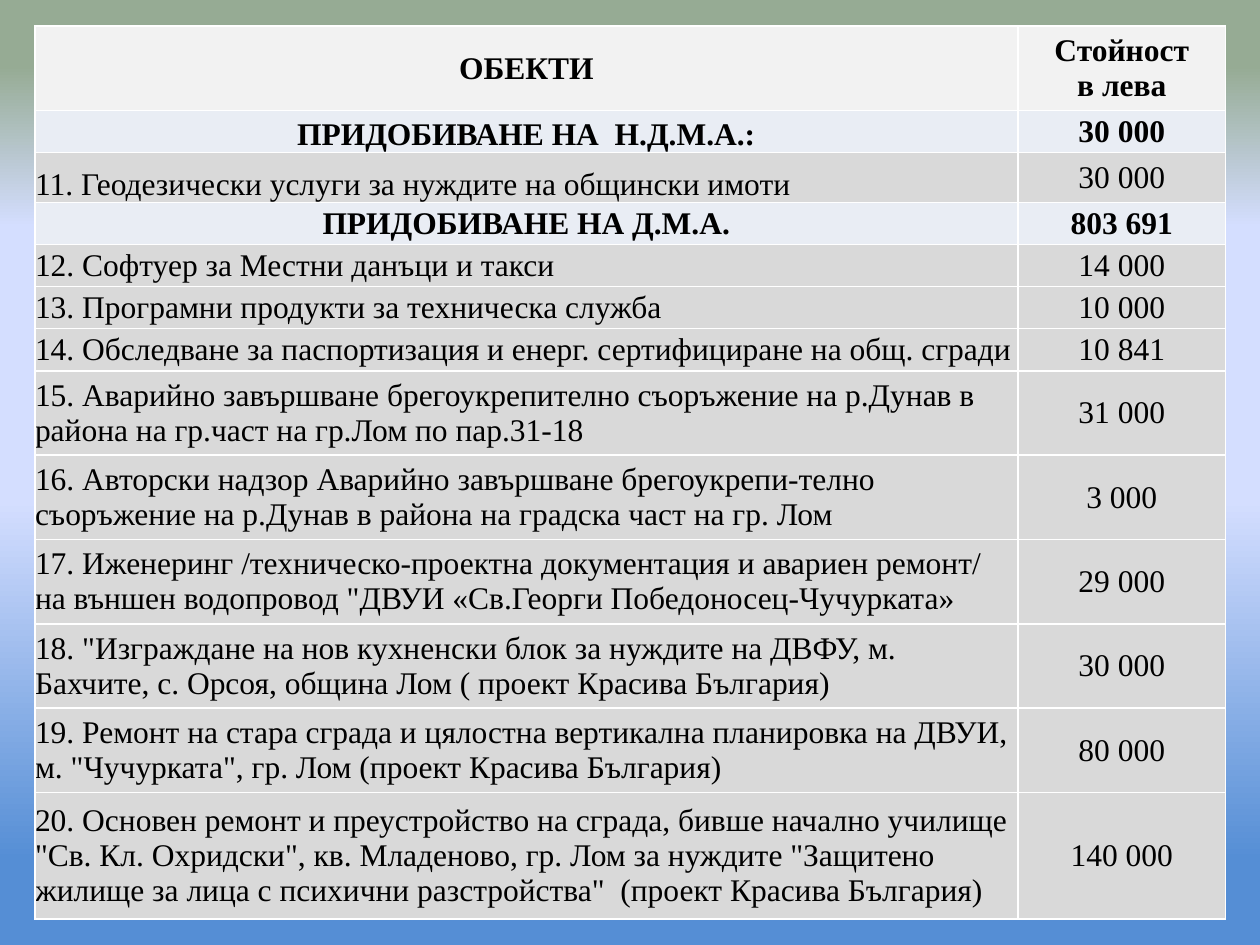
from dataclasses import dataclass

from lxml.etree import SubElement
from pptx import Presentation
from pptx.dml.color import RGBColor
from pptx.enum.text import MSO_ANCHOR, PP_ALIGN
from pptx.oxml.ns import qn
from pptx.util import Pt


@dataclass(frozen=True)
class Theme:
    font: str = "Times New Roman"
    text_size: float = 18
    text: str = "000000"
    border: str = "FFFFFF"
    border_width: float = 1
    header: str = "F2F2F2"
    group: str = "E9EDF4"
    item: str = "D9D9D9"
    # Background stops run from the bottom of the slide to the top
    background: tuple = ((9, "558ED5"), (47, "D4DEFF"), (76, "D4DEFF"), (93, "96AB94"))


THEME = Theme()
LEFT, TOP = 20, 15
COLUMN_WIDTHS = (561.6, 118.8)
LINE_HEIGHT = 24.1
TALL_LINE_HEIGHT = 28.3

# Kind of row, height in points, name, amount
ROWS = [
    ("header", 2 * LINE_HEIGHT, "ОБЕКТИ", "Стойност\nв лева"),
    ("group", LINE_HEIGHT, "ПРИДОБИВАНЕ НА  Н.Д.М.А.:", "30 000"),
    ("item", TALL_LINE_HEIGHT, "11. Геодезически услуги за нуждите на общински имоти", "30 000"),
    ("group", LINE_HEIGHT, "ПРИДОБИВАНЕ НА Д.М.А.", "803 691"),
    ("item", LINE_HEIGHT, "12. Софтуер за Местни данъци и такси", "14 000"),
    ("item", LINE_HEIGHT, "13. Програмни продукти за техническа служба", "10 000"),
    ("item", LINE_HEIGHT,
     "14. Обследване за паспортизация и енерг. сертифициране на общ. сгради", "10 841"),
    ("item", 2 * LINE_HEIGHT,
     "15. Аварийно завършване брегоукрепително съоръжение на р.Дунав в района "
     "на гр.част на гр.Лом по пар.31-18", "31 000"),
    ("item", 2 * LINE_HEIGHT,
     "16. Авторски надзор Аварийно завършване брегоукрепи-телно съоръжение "
     "на р.Дунав в района на градска част на гр. Лом", "3 000"),
    ("item", 2 * LINE_HEIGHT,
     "17. Иженеринг /техническо-проектна документация и авариен ремонт/ на външен "
     'водопровод "ДВУИ «Св.Георги Победоносец-Чучурката»', "29 000"),
    ("item", 2 * LINE_HEIGHT,
     '18. "Изграждане на нов кухненски блок за нуждите на ДВФУ, м. Бахчите, '
     "с. Орсоя, община Лом ( проект Красива България)", "30 000"),
    ("item", 2 * LINE_HEIGHT,
     "19. Ремонт на стара сграда и цялостна вертикална планировка на ДВУИ, "
     'м. "Чучурката", гр. Лом (проект Красива България)', "80 000"),
    ("item", 3 * LINE_HEIGHT,
     "20. Основен ремонт и преустройство на сграда, бивше начално училище "
     '"Св. Кл. Охридски", кв. Младеново, гр. Лом за нуждите "Защитено жилище '
     'за лица с психични разстройства"  (проект Красива България)', "140 000"),
]
BOTTOM_ANCHORED_ROWS = (1, 2)  # name cells only


def apply_format(target, values):
    for name, value in values.items():
        setattr(target, name, value)


def paint_background(page):
    fill = page.background.fill
    fill.gradient()
    fill.gradient_angle = 90
    stops = page.element.find(".//" + qn("a:gsLst"))
    for stop in list(stops):
        stops.remove(stop)
    for percent, color in THEME.background:
        stop = SubElement(stops, qn("a:gs"), pos=str(percent * 1000))
        SubElement(stop, qn("a:srgbClr"), val=color)


def add_borders(cell):
    properties = cell._tc.get_or_add_tcPr()
    for side in ("a:lnL", "a:lnR", "a:lnT", "a:lnB"):
        line = SubElement(properties, qn(side), w=str(Pt(THEME.border_width)))
        fill = SubElement(line, qn("a:solidFill"))
        SubElement(fill, qn("a:srgbClr"), val=THEME.border)


def fill_cell(cell, text, color, bold, align, anchor):
    add_borders(cell)
    cell.fill.solid()
    cell.fill.fore_color.rgb = RGBColor.from_string(color)
    apply_format(cell, {
        "margin_left": 0, "margin_right": 0, "margin_top": 0, "margin_bottom": 0,
        "vertical_anchor": anchor, "text": text,
    })
    for para in cell.text_frame.paragraphs:
        para.alignment = align
        for span in para.runs:
            apply_format(span.font, {
                "name": THEME.font, "size": Pt(THEME.text_size), "bold": bold,
            })
            span.font.color.rgb = RGBColor.from_string(THEME.text)


def add_budget_table(page):
    total_height = sum(height for _, height, _, _ in ROWS)
    frame = page.shapes.add_table(
        len(ROWS), len(COLUMN_WIDTHS),
        Pt(LEFT), Pt(TOP), Pt(sum(COLUMN_WIDTHS)), Pt(total_height))
    table = frame.table
    apply_format(table, {"first_row": False, "horz_banding": False})
    for column, width in zip(table.columns, COLUMN_WIDTHS):
        column.width = Pt(width)
    for index, (kind, height, name, amount) in enumerate(ROWS):
        table.rows[index].height = Pt(height)
        color = getattr(THEME, kind)
        bold = kind != "item"
        name_align = PP_ALIGN.CENTER if bold else PP_ALIGN.LEFT
        name_anchor = MSO_ANCHOR.BOTTOM if index in BOTTOM_ANCHORED_ROWS else MSO_ANCHOR.MIDDLE
        fill_cell(table.cell(index, 0), name, color, bold, name_align, name_anchor)
        fill_cell(table.cell(index, 1), amount, color, bold, PP_ALIGN.CENTER, MSO_ANCHOR.MIDDLE)


def main():
    deck = Presentation()
    apply_format(deck, {"slide_width": Pt(720), "slide_height": Pt(540)})
    # The slide has no title, so it uses the blank layout
    page = deck.slides.add_slide(deck.slide_layouts[6])
    paint_background(page)
    add_budget_table(page)
    deck.save("out.pptx")


if __name__ == "__main__":
    main()
